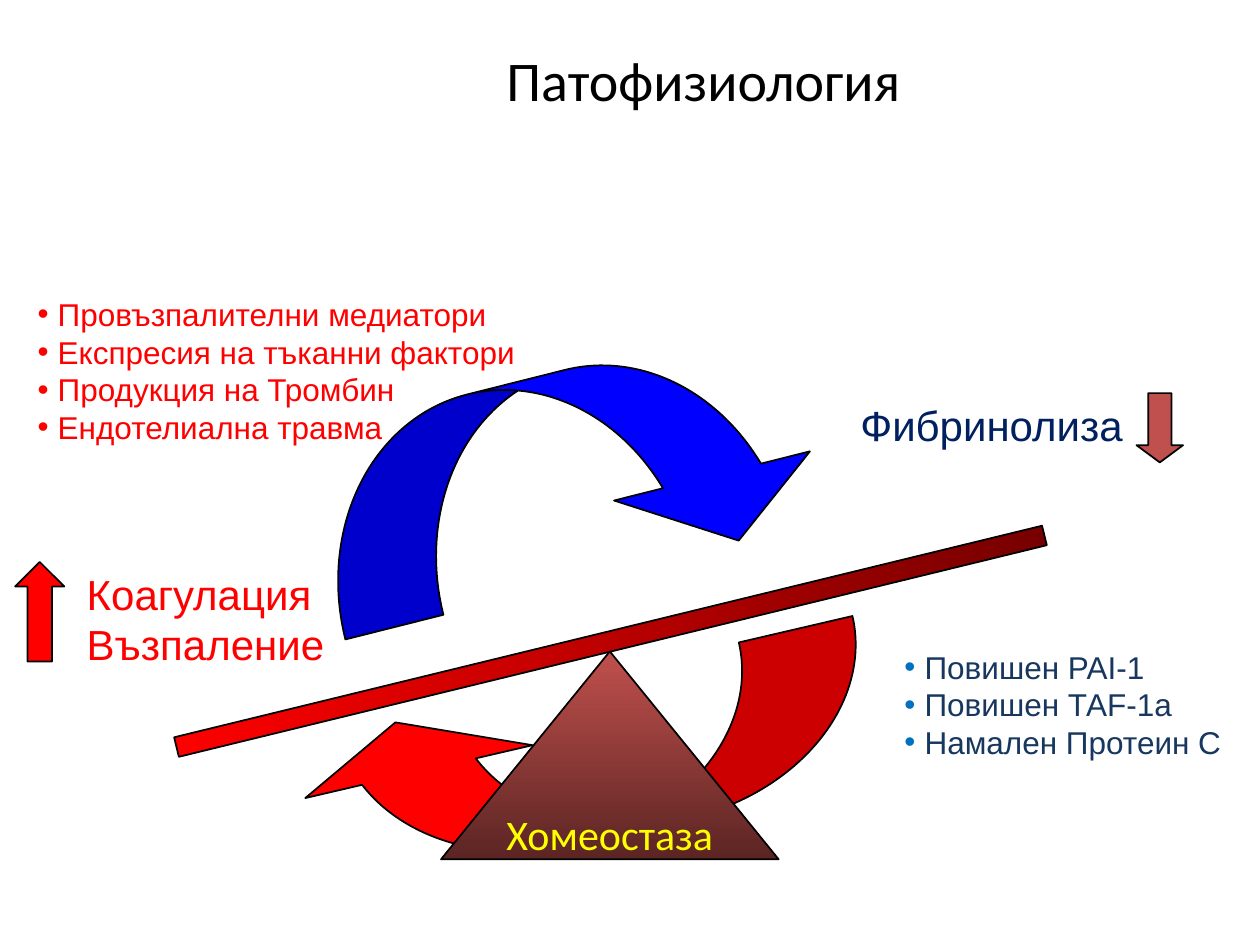
import pptx
import pptx.util
import pptx.dml.color
import pptx.enum.shapes
import pptx.enum.text
import pptx.oxml.ns
from lxml import etree

Inches, Pt = pptx.util.Inches, pptx.util.Pt
KIND = pptx.enum.shapes.MSO_SHAPE
ALIGN = pptx.enum.text.PP_ALIGN
ANCHOR = pptx.enum.text.MSO_ANCHOR

HUES = {
    "black": "000000", "red": "FF0000", "maroon": "760000", "blue": "0000FF",
    "brick": "C0504D", "umber": "5B2523", "yellow": "FFFF00",
    "navy": "002060", "slate": "17375E", "azure": "0070C0",
}

# Shapes from back to front: kind, box, turn, flip, adjustments, fill
# A fill of two hues is a gradient, with its angle counted anticlockwise
SHAPES = [
    (KIND.CURVED_DOWN_ARROW, (2.48, 2.96, 4.02, 1.65), 345.9, False,
     (0.486, 0.972, 0.333), "blue"),
    (KIND.CURVED_UP_ARROW, (2.32, 5.4, 4.65, 1.27), 346.9, True,
     (0.729, 1.458, 0.333), "red"),
    (KIND.ISOSCELES_TRIANGLE, (3.5, 5.17, 2.68, 1.65), 0, False,
     (0.5,), ("brick", "umber", 270)),
    (KIND.RECTANGLE, (1.3, 5.01, 7.09, 0.16), 346.3, False,
     (), ("red", "maroon", 0)),
    (KIND.UP_ARROW, (0.12, 4.46, 0.39, 0.79), 0, False, (0.5, 0.5), "red"),
    (KIND.DOWN_ARROW, (9.02, 3.12, 0.37, 0.55), 0, False, (0.5, 0.37), "brick"),
]
PIVOT = "Хомеостаза"
TITLE = "Патофизиология"

# Labels: box, wrap, size, hue, bullet hue, lines
LABELS = [
    ((0.59, 4.46, 2.24, 0.91), True, 24, "red", None,
     ["Коагулация", "Възпаление"]),
    ((6.73, 3.12, 2.29, 0.5), False, 24, "navy", None, ["Фибринолиза"]),
    ((0.2, 2.29, 4.02, 1.31), False, 18, "red", "red",
     ["Провъзпалителни медиатори", "Експресия на тъканни фактори",
      "Продукция на Тромбин", "Ендотелиална травма"]),
    ((7.08, 5.09, 2.72, 1), False, 18, "slate", "azure",
     ["Повишен PAI-1", "Повишен ТАF-1a", "Намален Протеин С"]),
]


def tint(name):
    return pptx.dml.color.RGBColor.from_string(HUES[name])


def add_bullet(para, hue):
    props = para._p.get_or_add_pPr()
    hang = Inches(0.16)
    props.set("marL", str(hang))
    props.set("indent", str(-hang))
    qn = pptx.oxml.ns.qn
    color = etree.SubElement(props, qn("a:buClr"))
    etree.SubElement(color, qn("a:srgbClr"), val=HUES[hue])
    etree.SubElement(props, qn("a:buFont"), typeface="Arial")
    etree.SubElement(props, qn("a:buChar"), char="•")


def write(frame, lines, size, face, hue, align=ALIGN.LEFT, dot=None):
    for i, line in enumerate(lines):
        para = frame.add_paragraph() if i else frame.paragraphs[0]
        para.alignment = align
        if dot:
            add_bullet(para, dot)
        run = para.add_run()
        run.text = line
        run.font.size = Pt(size)
        run.font.name = face
        run.font.color.rgb = tint(hue)


def add_shape(slide, kind, box, turn, flip, adjust, fill):
    shape = slide.shapes.add_shape(kind, *map(Inches, box))
    shape.shadow.inherit = False
    shape.rotation = turn
    if flip:
        shape._element.spPr.xfrm.set("flipH", "1")
    for i, value in enumerate(adjust):
        shape.adjustments[i] = value
    if isinstance(fill, str):
        shape.fill.solid()
        shape.fill.fore_color.rgb = tint(fill)
    else:
        *names, angle = fill
        shape.fill.gradient()
        shape.fill.gradient_angle = angle
        for i, (stop, name) in enumerate(zip(shape.fill.gradient_stops, names)):
            stop.color.rgb = tint(name)
            stop.position = i
    shape.line.color.rgb = tint("black")
    shape.line.width = Pt(1)
    return shape


def add_text(slide, box, wrap):
    frame = slide.shapes.add_textbox(*map(Inches, box)).text_frame
    frame.word_wrap = wrap
    return frame


def main():
    deck = pptx.Presentation()
    deck.slide_width, deck.slide_height = Inches(10), Inches(7.5)
    slide = deck.slides.add_slide(deck.slide_layouts[6])

    # Seesaw, arrows and the label at the foot of the pivot
    for spec_row in SHAPES:
        shape = add_shape(slide, *spec_row)
        if spec_row[0] == KIND.ISOSCELES_TRIANGLE:
            frame = shape.text_frame
            frame.word_wrap = False
            frame.vertical_anchor = ANCHOR.BOTTOM
            frame.margin_bottom = 0
            write(frame, [PIVOT], 24, "Calibri", "yellow", ALIGN.CENTER)

    # Title
    frame = add_text(slide, (1.17, 0, 8.83, 1.25), True)
    frame.vertical_anchor = ANCHOR.MIDDLE
    write(frame, [TITLE], 32, "Calibri", "black", ALIGN.CENTER)

    # Labels and bullet lists
    for box, wrap, size, hue, dot, lines in LABELS:
        write(add_text(slide, box, wrap), lines, size, "Arial", hue, dot=dot)

    deck.save("out.pptx")


if __name__ == "__main__":
    main()
